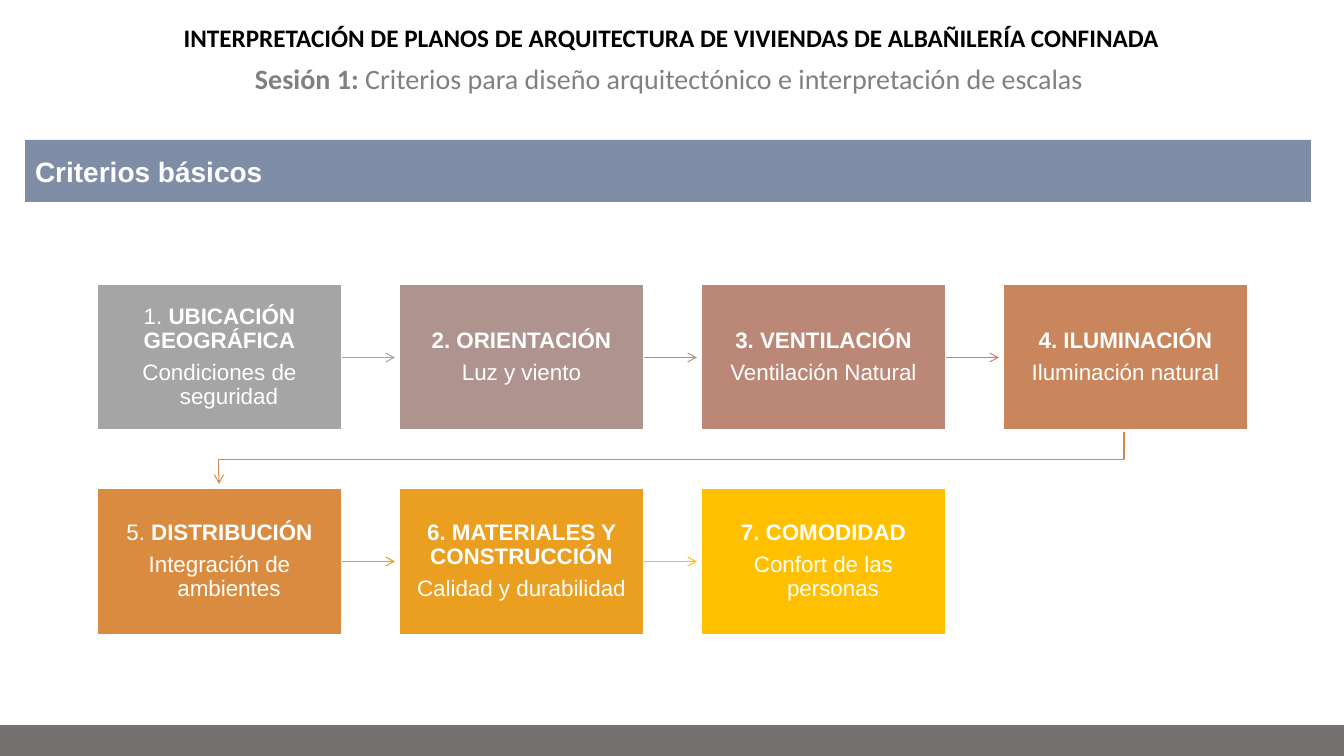
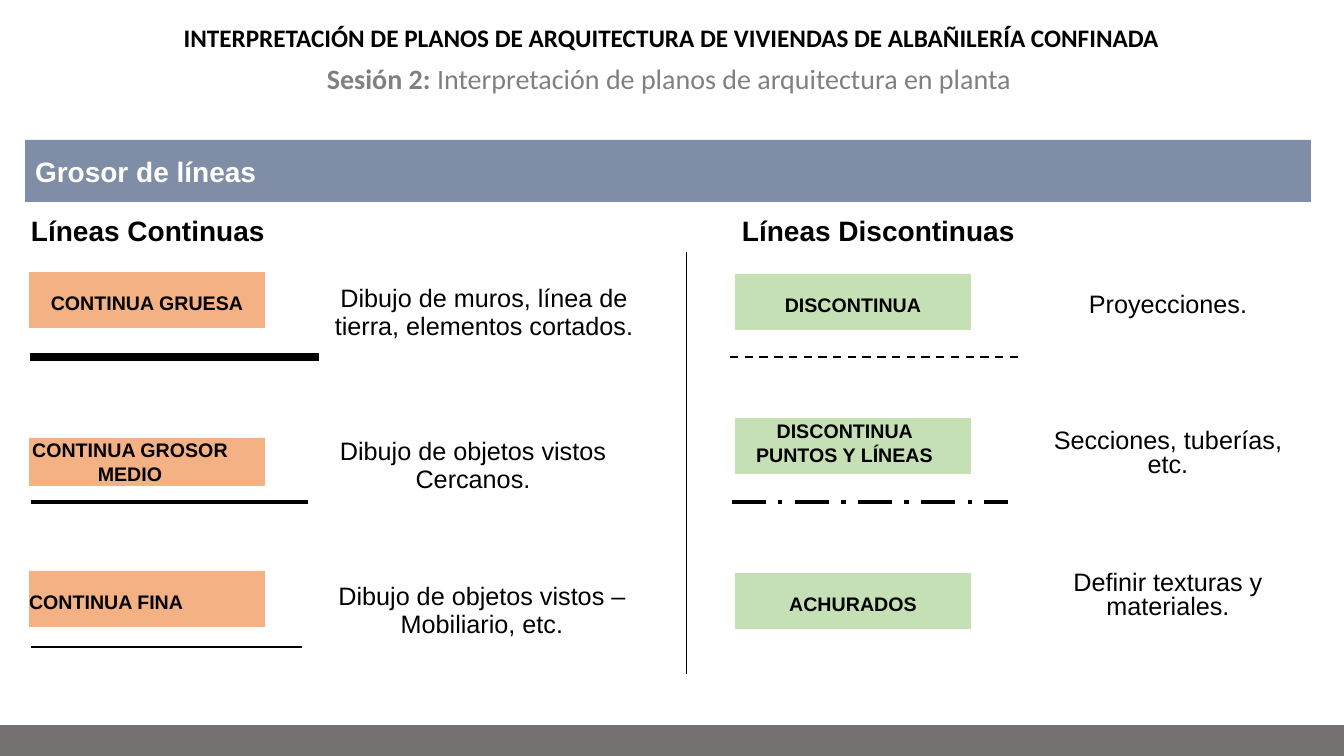
from pptx import Presentation
from pptx.dml.color import RGBColor
from pptx.enum.dml import MSO_LINE
from pptx.enum.shapes import MSO_CONNECTOR, MSO_SHAPE, MSO_SHAPE_TYPE
from pptx.enum.text import MSO_ANCHOR, MSO_AUTO_SIZE, PP_ALIGN
from pptx.oxml.ns import qn
from pptx.util import Pt
from lxml import etree

PX = 914400 / 100.8
LEFT, CENTER = PP_ALIGN.LEFT, PP_ALIGN.CENTER
TOP, MIDDLE = MSO_ANCHOR.TOP, MSO_ANCHOR.MIDDLE
RECTANGLE, STRAIGHT = MSO_SHAPE.RECTANGLE, MSO_CONNECTOR.STRAIGHT
SOLID, DASH, DASH_DOT = MSO_LINE.SOLID, MSO_LINE.DASH, MSO_LINE.LONG_DASH_DOT
SIDE_RIGHT = 3


class Theme:
    black, white, gray = "000000", "FFFFFF", "808080"
    footer, band, orange, green = "767171", "203864", "F4B183", "C5E0B4"
    steps = ["A5A5A5", "AF938F", "BB8776", "C9855C", "D98C3F", "EB9F21", "FFC000"]
    arrows = ["A5A5A5", "B1908A", "C0856C", "D2884B", "E79A27", "FFC000"]
    heading, body = "Calibri", "Arial"
    large, medium, small, label = 20, 18, 16, 14


def add_box(page, area, fill=None):
    place = [round(value * PX) for value in area]
    if fill is None:
        return page.shapes.add_textbox(*place)
    box = page.shapes.add_shape(RECTANGLE, *place)
    box.shadow.inherit = False
    box.fill.solid()
    box.fill.fore_color.rgb = RGBColor.from_string(fill)
    box.line.fill.background()
    return box


def write(box, content, size, colour, font=Theme.body, anchor=TOP, insets=(10, 5, 10, 5)):
    frame = box.text_frame
    left, top, right, bottom = [round(value * PX) for value in insets]
    settings = {"word_wrap": True, "auto_size": MSO_AUTO_SIZE.NONE, "vertical_anchor": anchor,
                "margin_left": left, "margin_top": top, "margin_right": right, "margin_bottom": bottom}
    for name, value in settings.items():
        setattr(frame, name, value)
    for number, (spans, layout) in enumerate(content):
        para = frame.add_paragraph() if number else frame.paragraphs[0]
        for name, value in layout.items():
            setattr(para, name, value)
        for text, bold in spans:
            span = para.add_run()
            span.text = text
            for name, value in {"name": font, "size": Pt(size), "bold": bold}.items():
                setattr(span.font, name, value)
            span.font.color.rgb = RGBColor.from_string(colour)


deck = Presentation()
deck.slide_width, deck.slide_height = round(1344 * PX), round(756 * PX)

COURSE = "INTERPRETACIÓN DE PLANOS DE ARQUITECTURA DE VIVIENDAS DE ALBAÑILERÍA CONFINADA"
SESSIONS = [
    ("Sesión 1: ", "Criterios para diseño arquitectónico e interpretación de escalas", "Criterios básicos"),
    ("Sesión 2: ", "Interpretación de planos de arquitectura en planta", "Grosor de líneas"),
]
pages = []
for session, topic, section in SESSIONS:
    page = deck.slides.add_slide(deck.slide_layouts[5])
    pages.append(page)
    add_box(page, (0, 725, 1344, 31), Theme.footer)
    title = page.shapes.title
    for name, value in {"left": 20, "top": 17, "width": 1303, "height": 40}.items():
        setattr(title, name, round(value * PX))
    write(title, [([(COURSE, True)], {"alignment": CENTER})], Theme.medium, Theme.black, Theme.heading)
    subtitle = add_box(page, (15, 57, 1308, 65))
    write(subtitle, [([(session, True), (topic, False)], {"alignment": CENTER})],
          Theme.large, Theme.gray, Theme.heading)
    band = add_box(page, (25, 140, 1286, 62), Theme.band)
    band_colour = band.fill._xPr.find(qn("a:solidFill"))[0]
    etree.SubElement(band_colour, qn("a:alpha"), val="57000")
    write(band, [([(section, True)], {"alignment": LEFT})], Theme.large, Theme.white, anchor=MIDDLE)
criteria_page, lines_page = pages

CRITERIA = [
    ([("1. ", False), ("UBICACIÓN GEOGRÁFICA", True)], "Condiciones de seguridad"),
    ([("2. ORIENTACIÓN", True)], "Luz y viento"),
    ([("3. VENTILACIÓN", True)], "Ventilación Natural"),
    ([("4. ILUMINACIÓN", True)], "Iluminación natural"),
    ([("5. ", False), ("DISTRIBUCIÓN", True)], "Integración de ambientes"),
    ([("6. MATERIALES Y CONSTRUCCIÓN", True)], "Calidad y durabilidad"),
    ([("7. COMODIDAD", True)], "Confort de las personas"),
]
COLUMNS, STEP_WIDTH, STEP_HEIGHT = 4, 245, 147
arrows = []
for index, (name_spans, detail) in enumerate(CRITERIA):
    row, column = divmod(index, COLUMNS)
    left, top = 97 + 302 * column, 284 + 204 * row
    step = add_box(criteria_page, (left, top, STEP_WIDTH, STEP_HEIGHT), Theme.steps[index])
    step.line.color.rgb = RGBColor.from_string(Theme.white)
    step.line.width = Pt(2)
    write(step, [
        (name_spans, {"alignment": CENTER, "line_spacing": 0.9, "space_after": Pt(5.6)}),
        ([(detail, False)], {"alignment": CENTER, "line_spacing": 0.9, "space_after": Pt(2.4)}),
    ], Theme.small, Theme.white, anchor=MIDDLE, insets=(12, 12, 12, 12))
    indent = round(19 * PX)
    detail_format = step.text_frame.paragraphs[1]._p.get_or_add_pPr()
    detail_format.set("marL", str(indent))
    detail_format.set("indent", str(-indent))
    if index == len(CRITERIA) - 1:
        continue
    if column < COLUMNS - 1:
        right, middle = left + STEP_WIDTH, top + STEP_HEIGHT / 2
        ends = [round(value * PX) for value in (right, middle, right + 53, middle)]
        arrow = criteria_page.shapes.add_connector(STRAIGHT, *ends)
        arrow.begin_connect(step, SIDE_RIGHT)
    else:
        outline = criteria_page.shapes.build_freeform(1124, 432, scale=PX)
        outline.add_line_segments([(1124, 460), (219, 460), (219, 484)], close=False)
        arrow = outline.convert_to_shape()
        arrow.shadow.inherit = False
        arrow.fill.background()
    arrows.append(arrow)

for arrow, colour in zip(arrows, Theme.arrows):
    arrow.line.color.rgb = RGBColor.from_string(colour)
    arrow.line.width = Pt(0.75)
    etree.SubElement(arrow.line._get_or_add_ln(), qn("a:tailEnd"), type="arrow")

for left, heading in [(21, "Líneas Continuas"), (732, "Líneas Discontinuas")]:
    box = add_box(lines_page, (left, 209, 322, 44))
    write(box, [([(heading, True)], {"alignment": LEFT})], Theme.large, Theme.black)

LABELS = [
    ("CONTINUA GRUESA", 29, 272, 56, Theme.orange, CENTER, 19, 0),
    ("CONTINUA GROSOR MEDIO", 29, 438, 48, Theme.orange, CENTER, 0, 34),
    ("CONTINUA FINA", 29, 571, 56, Theme.orange, LEFT, 19, 0),
    ("DISCONTINUA", 735, 274, 56, Theme.green, CENTER, 19, 0),
    ("DISCONTINUA PUNTOS Y LÍNEAS", 735, 418, 56, Theme.green, CENTER, 1, 17),
    ("ACHURADOS", 735, 573, 56, Theme.green, CENTER, 19, 0),
]
for text, left, top, height, fill, alignment, inset_top, inset_right in LABELS:
    box = add_box(lines_page, (left, top, 236, height), fill)
    write(box, [([(text, True)], {"alignment": alignment})], Theme.label, Theme.black,
          insets=(0, inset_top, inset_right, 0))

USES = [
    (["Dibujo de muros, línea de", "tierra, elementos cortados."], (310, 288, 348, 60)),
    (["Dibujo de objetos vistos", "Cercanos."], (320, 441, 306, 60)),
    (["Dibujo de objetos vistos –", "Mobiliario, etc."], (320, 586, 324, 60)),
    (["Proyecciones."], (994, 294, 348, 33)),
    (["Secciones, tuberías, etc."], (1043, 430, 250, 60)),
    (["Definir texturas y materiales."], (1043, 572, 250, 60)),
]
for texts, area in USES:
    content = [([(text, False)], {"alignment": CENTER, "line_spacing": spacing})
               for text, spacing in zip(texts, (0.8, 0.96))]
    write(add_box(lines_page, area), content, Theme.medium, Theme.black, insets=(0, 0, 0, 0))

LINES = [
    ((30, 357, 319, 357), 6, SOLID),
    ((31, 502, 308, 502), 3, SOLID),
    ((31, 647, 302, 647), 0.75, SOLID),
    ((730, 357, 1020, 357), 1.5, DASH),
    ((732, 502, 1008, 502), 3, DASH_DOT),
    ((687, 252, 687, 674), 0.75, SOLID),
]
for ends, width, dash in LINES:
    line = lines_page.shapes.add_connector(STRAIGHT, *[round(value * PX) for value in ends])
    line.line.color.rgb = RGBColor.from_string(Theme.black)
    line.line.width = Pt(width)
    line.line.dash_style = dash

for page in pages:
    for shape in page.shapes:
        if shape.shape_type == MSO_SHAPE_TYPE.LINE:
            etree.SubElement(shape.element.spPr, qn("a:effectLst"))

deck.save("out.pptx")
